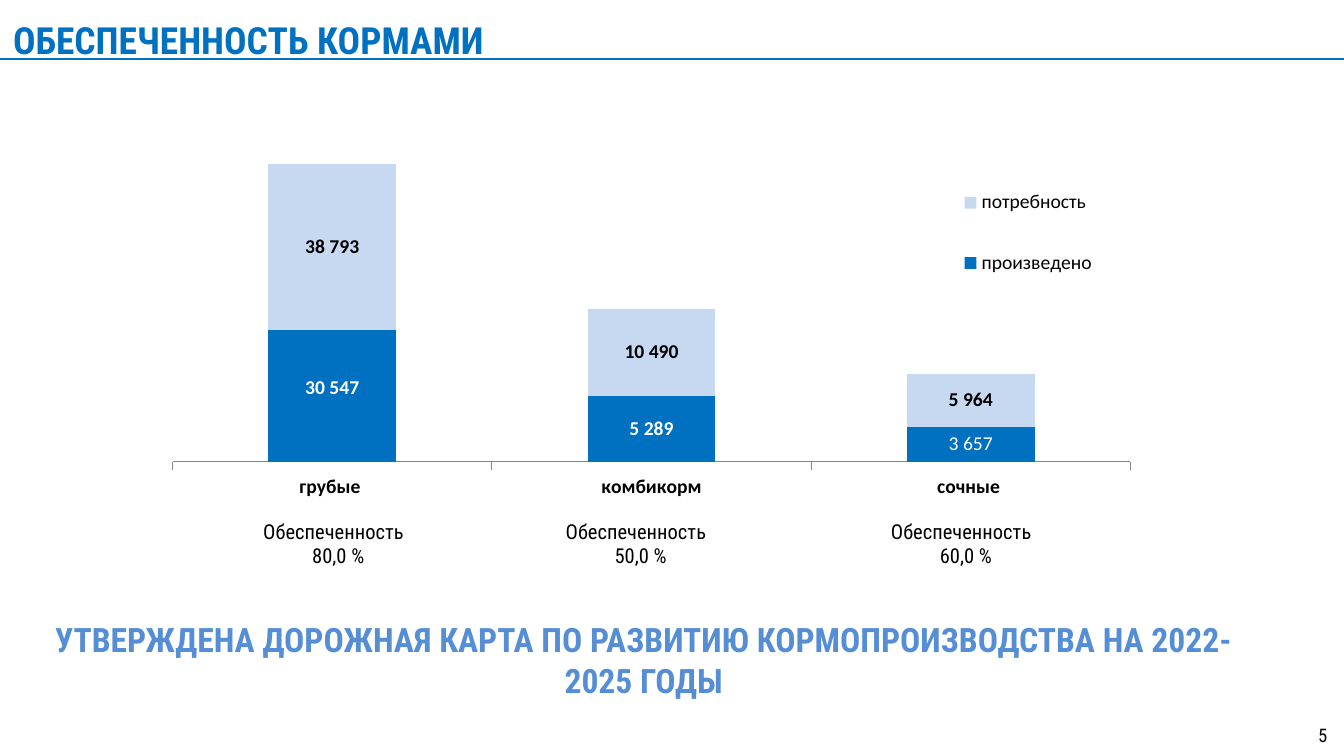
from lxml.etree import SubElement
from pptx import Presentation
from pptx.chart.data import CategoryChartData
from pptx.dml.color import RGBColor
from pptx.enum.chart import XL_CHART_TYPE, XL_LABEL_POSITION, XL_LEGEND_POSITION, XL_TICK_MARK
from pptx.enum.shapes import MSO_CONNECTOR
from pptx.enum.text import PP_ALIGN
from pptx.oxml import parse_xml
from pptx.oxml.ns import nsdecls, qn
from pptx.util import Inches, Pt

FONT, CHART_FONT = "Roboto Condensed", "Calibri"
BLUE, PALE, MID, BLACK, WHITE, GREY = "0070C0", "C6D9F1", "558ED5", "000000", "FFFFFF", "868686"

TITLE = "ОБЕСПЕЧЕННОСТЬ КОРМАМИ"
FOOTER = "УТВЕРЖДЕНА ДОРОЖНАЯ КАРТА ПО РАЗВИТИЮ КОРМОПРОИЗВОДСТВА НА 2022-2025 ГОДЫ"
PAGE = "5"
FEEDS = ["грубые ", "комбикорм", "сочные "]
SERIES = [
    ("произведено", [30000, 15000, 8000], ["30 547", "5 289", "3 657"], BLUE, WHITE),
    ("потребность ", [38000, 20000, 12000], ["38 793", "10 490", "5 964"], PALE, BLACK),
]
REGULAR_LABELS = {"3 657"}
COVERAGE = [(1.75, "80,0 %"), (4, "50,0 %"), (6.42, "60,0 %")]


def rgb(color):
    return RGBColor.from_string(color)


def set_font(font, name, size, color, bold=False):
    font.name, font.size, font.bold = name, Pt(size), bold
    font.color.rgb = rgb(color)


def add_text(s, box, text, size, color=BLACK, bold=False, align=PP_ALIGN.LEFT, wrap=True):
    tf = s.shapes.add_textbox(*map(Inches, box)).text_frame
    tf.word_wrap = wrap
    tf.text = text
    for p in tf.paragraphs:
        p.alignment = align
        for r in p.runs:
            set_font(r.font, FONT, size, color, bold)


def make_layout(modes, **percents):
    layout = parse_xml(f"<c:layout {nsdecls('c')}><c:manualLayout/></c:layout>")
    for tag, value in modes:
        SubElement(layout[0], qn(f"c:{tag}")).set("val", value)
    for tag, percent in percents.items():
        SubElement(layout[0], qn(f"c:{tag}")).set("val", str(percent / 100))
    return layout


def place_chart_parts(chart):
    area = chart.element.find(".//" + qn("c:plotArea"))
    legend = chart.element.find(".//" + qn("c:legend"))
    for parent in (area, legend):
        for old in parent.findall(qn("c:layout")):
            parent.remove(old)
    edges = [("xMode", "edge"), ("yMode", "edge")]
    inner = [("layoutTarget", "inner")] + edges
    area.insert(0, make_layout(inner, x=4.6, y=0, w=90, h=86.9))
    legend.find(qn("c:legendPos")).addnext(make_layout(edges, x=77.5, y=10.6, w=15, h=39))
    first_label = chart.element.find(".//" + qn("c:dLbl"))
    first_label.find(qn("c:idx")).addnext(make_layout([], x=0, y=-2))


def add_feed_chart(s):
    data = CategoryChartData()
    data.categories = FEEDS
    for name, values, *_ in SERIES:
        data.add_series(name, values)
    box = map(Inches, (0.92, 0.83, 7.92, 3))
    chart = s.shapes.add_chart(XL_CHART_TYPE.COLUMN_STACKED, *box, data).chart
    chart.has_title = False
    set_font(chart.font, CHART_FONT, 10.5, BLACK)

    plot = chart.plots[0]
    plot.gap_width, plot.overlap, plot.vary_by_categories = 150, 100, False
    for series, (_, _, labels, fill, color) in zip(plot.series, SERIES):
        series.format.fill.solid()
        series.format.fill.fore_color.rgb = rgb(fill)
        series.data_labels.show_value = True
        set_font(series.data_labels.font, CHART_FONT, 10.5, color, True)
        for i, text in enumerate(labels):
            label = series.points[i].data_label
            label.text_frame.text = text
            r = label.text_frame.paragraphs[0].runs[0]
            set_font(r.font, CHART_FONT, 10.5, color, text not in REGULAR_LABELS)
            label.position = XL_LABEL_POSITION.CENTER

    axis = chart.category_axis
    axis.major_tick_mark = XL_TICK_MARK.OUTSIDE
    axis.format.line.color.rgb = rgb(GREY)
    axis.format.line.width = Pt(0.5)
    set_font(axis.tick_labels.font, CHART_FONT, 10.5, BLACK, True)
    axis = chart.value_axis
    axis.visible = axis.has_major_gridlines = False
    axis.minimum_scale, axis.maximum_scale = 0, 80000

    chart.has_legend = True
    chart.legend.position = XL_LEGEND_POSITION.RIGHT
    chart.legend.include_in_layout = False
    set_font(chart.legend.font, CHART_FONT, 10.5, BLACK)
    place_chart_parts(chart)


def add_rule(s, y):
    line = s.shapes.add_connector(MSO_CONNECTOR.STRAIGHT, 0, Inches(y), Inches(10), Inches(y))
    line.line.color.rgb = rgb(BLUE)
    line.line.width = Pt(1)
    SubElement(line.element.spPr, qn("a:effectLst"))


def main():
    prs = Presentation()
    prs.slide_width = Inches(10)
    prs.slide_height = prs.slide_width * 9 // 16
    s = prs.slides.add_slide(prs.slide_layouts[6])
    add_text(s, (0, 0.08, 10, 0.4), TITLE, 20, BLUE, True)
    add_feed_chart(s)
    for x, share in COVERAGE:
        add_text(s, (x, 3.81, 1.5, 0.47), f"Обеспеченность \n {share}", 11, align=PP_ALIGN.CENTER)
    add_rule(s, 0.44)
    add_text(s, (9.71, 5.34, 0.27, 0.27), PAGE, 10, wrap=False)
    add_text(s, (0.08, 4.56, 9.42, 1.04), FOOTER, 18, MID, True, PP_ALIGN.CENTER)
    prs.save("out.pptx")


if __name__ == "__main__":
    main()
